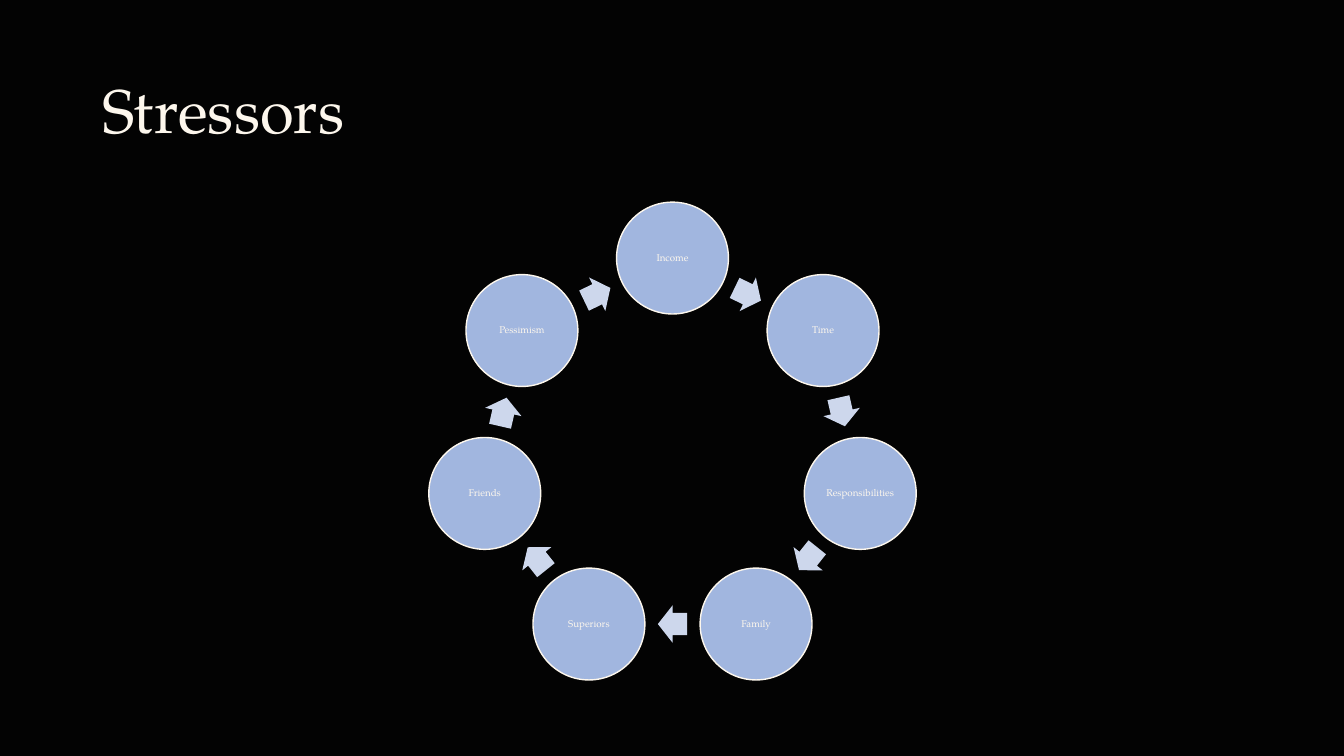
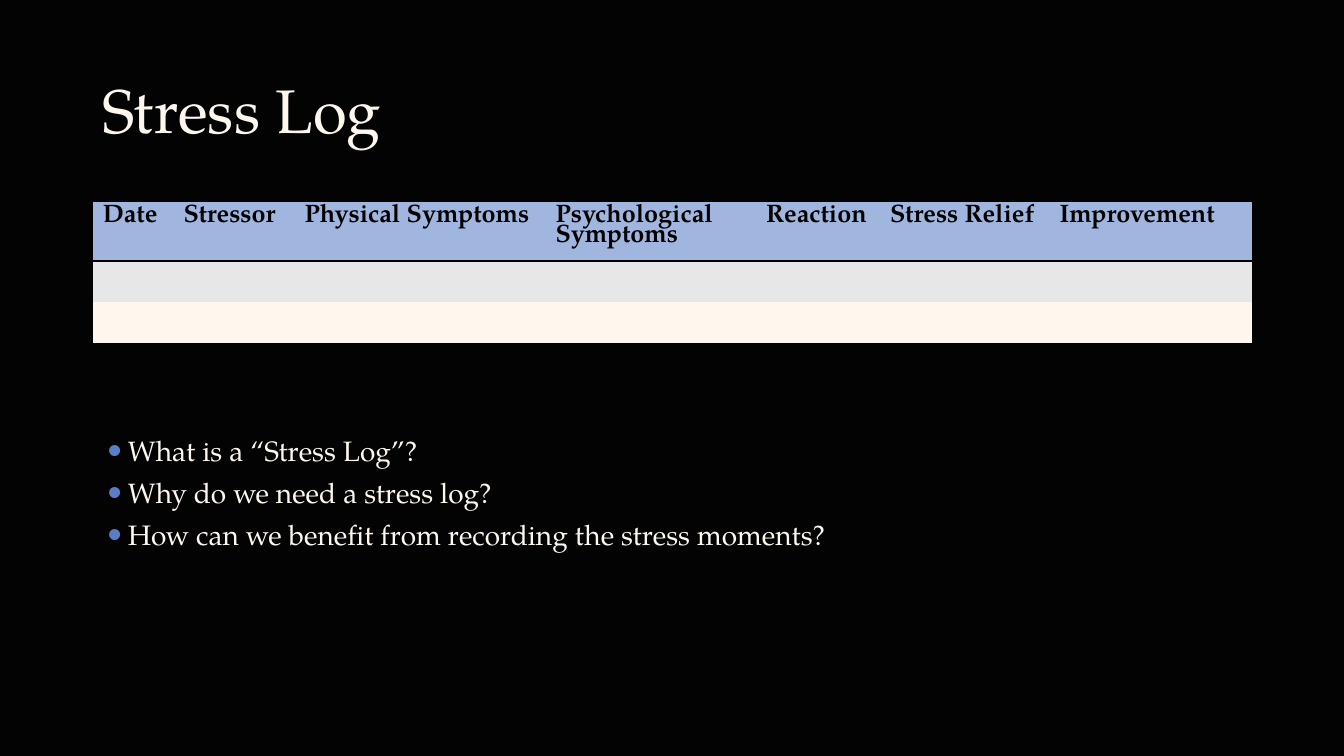
from math import cos, pi, sin

from lxml import etree
from pptx import Presentation
from pptx.dml.color import RGBColor
from pptx.enum.shapes import MSO_SHAPE
from pptx.enum.text import MSO_ANCHOR, PP_ALIGN
from pptx.oxml.ns import qn
from pptx.util import Emu, Pt

OVAL, ARROW, RECT = MSO_SHAPE.OVAL, MSO_SHAPE.RIGHT_ARROW, MSO_SHAPE.RECTANGLE
TOP, MIDDLE = MSO_ANCHOR.TOP, MSO_ANCHOR.MIDDLE
LEFT, CENTER = PP_ALIGN.LEFT, PP_ALIGN.CENTER

PX = 9144  # 100 px to the inch
FONT = "TeX Gyre Pagella"
DARK, CREAM, BLACK = "030303", "FDF7ED", "000000"
BLUE, PALE, DOT, GREY = "A1B6DF", "CDD7EC", "597EC7", "E7E7E7"
NO_STYLE = "{2D5ABB26-0587-4C30-8999-92F81FD0307C}"


def paint(target, color):
    target.solid()
    target.fore_color.rgb = RGBColor.from_string(color)


def write(para, text, size, color, bold=False):
    run = para.add_run()
    run.text = text
    run.font.name, run.font.size, run.font.bold = FONT, Pt(size), bold
    paint(run.font.fill, color)


# Shared look: size, background, titles
prs = Presentation()
prs.slide_width, prs.slide_height = Emu(1333 * PX), Emu(750 * PX)
paint(prs.slide_master.background.fill, DARK)

slides = []
for name in ("Stressors", "Stress Log"):
    slide = prs.slides.add_slide(prs.slide_layouts[5])
    title = slide.shapes.title
    title.left, title.top = Emu(92 * PX), Emu(40 * PX)
    title.width, title.height = Emu(1150 * PX), Emu(145 * PX)
    title.text_frame.vertical_anchor = MIDDLE
    para = title.text_frame.paragraphs[0]
    para.alignment, para.line_spacing = LEFT, 0.9
    write(para, name, 44, CREAM)
    slides.append(slide)
ring, log = slides

# Ring of stressors, each followed by an arrow to the next
words = ("Income", "Time", "Responsibilities", "Family",
         "Superiors", "Friends", "Pessimism")
MID_X, MID_Y, RADIUS, DISC = 667, 447, 191, 111
ARROW_W, ARROW_H = 29, 37
step = 2 * pi / len(words)
reach = RADIUS * cos(step / 2)  # arrows sit halfway between two discs

for i, word in enumerate(words):
    turn = i * step
    x, y = MID_X + RADIUS * sin(turn), MID_Y - RADIUS * cos(turn)
    disc = ring.shapes.add_shape(
        OVAL, Emu(round((x - DISC / 2) * PX)), Emu(round((y - DISC / 2) * PX)),
        Emu(DISC * PX), Emu(DISC * PX))
    disc.shadow.inherit = False
    paint(disc.fill, BLUE)
    paint(disc.line.fill, CREAM)
    disc.line.width = Pt(1)
    frame = disc.text_frame
    frame.word_wrap, frame.vertical_anchor = True, MIDDLE
    frame.margin_left = frame.margin_right = Emu(PX)
    frame.margin_top = frame.margin_bottom = Emu(PX)
    para = frame.paragraphs[0]
    para.alignment, para.line_spacing = CENTER, 0.9
    write(para, word, 7, CREAM)

    turn += step / 2
    x, y = MID_X + reach * sin(turn), MID_Y - reach * cos(turn)
    arrow = ring.shapes.add_shape(
        ARROW, Emu(round((x - ARROW_W / 2) * PX)),
        Emu(round((y - ARROW_H / 2) * PX)),
        Emu(ARROW_W * PX), Emu(ARROW_H * PX))
    arrow.adjustments[0], arrow.adjustments[1] = 0.6, 0.5
    arrow.rotation = (i + 0.5) * 360 / len(words)
    arrow.shadow.inherit = False
    paint(arrow.fill, PALE)
    arrow.line.fill.background()

# Log table
heads = (("Date", 80), ("Stressor", 120), ("Physical Symptoms", 249),
         ("Psychological Symptoms", 209), ("Reaction", 123),
         ("Stress Relief", 168), ("Improvement", 201))
rows = ((59, BLUE), (40, GREY), (39, CREAM))
holder = log.shapes.add_table(
    len(rows), len(heads), Emu(92 * PX), Emu(200 * PX),
    Emu(sum(wide for _, wide in heads) * PX),
    Emu(sum(high for high, _ in rows) * PX))
table = holder.table
table.horz_banding = False
table._tbl.tblPr.find(qn("a:tableStyleId")).text = NO_STYLE

for c, (_, wide) in enumerate(heads):
    table.columns[c].width = Emu(wide * PX)
for r, (high, color) in enumerate(rows):
    table.rows[r].height = Emu(high * PX)
    for c, (head, _) in enumerate(heads):
        cell = table.cell(r, c)
        para = cell.text_frame.paragraphs[0]
        para.line_spacing = 0.8
        if r == 0:
            write(para, head, 18, BLACK, True)
            # Rule below the header
            rule = etree.SubElement(cell._tc.get_or_add_tcPr(), qn("a:lnB"),
                                    w=str(Pt(2)))
            ink = etree.SubElement(rule, qn("a:solidFill"))
            etree.SubElement(ink, qn("a:srgbClr"), val=DARK)
        paint(cell.fill, color)

# Questions
asks = ("What is a “Stress Log”?",
        "Why do we need a stress log?",
        "How can we benefit from recording the stress moments?")
box = log.shapes.add_shape(RECT, Emu(92 * PX), Emu(425 * PX),
                           Emu(1150 * PX), Emu(151 * PX))
box.shadow.inherit = False
paint(box.fill, DARK)
box.line.fill.background()
frame = box.text_frame
frame.word_wrap, frame.vertical_anchor = True, TOP

for i, ask in enumerate(asks):
    para = frame.add_paragraph() if i else frame.paragraphs[0]
    para.alignment = LEFT
    para.space_before = Pt(6 if i else 0)
    props = para._p.get_or_add_pPr()
    props.set("marL", str(25 * PX))
    props.set("indent", str(-20 * PX))
    tint = etree.SubElement(props, qn("a:buClr"))
    etree.SubElement(tint, qn("a:srgbClr"), val=DOT)
    etree.SubElement(props, qn("a:buSzPct"), val="145000")
    etree.SubElement(props, qn("a:buFont"), typeface="Arial")
    etree.SubElement(props, qn("a:buChar"), char="•")
    write(para, ask, 20, CREAM)

prs.save("out.pptx")
